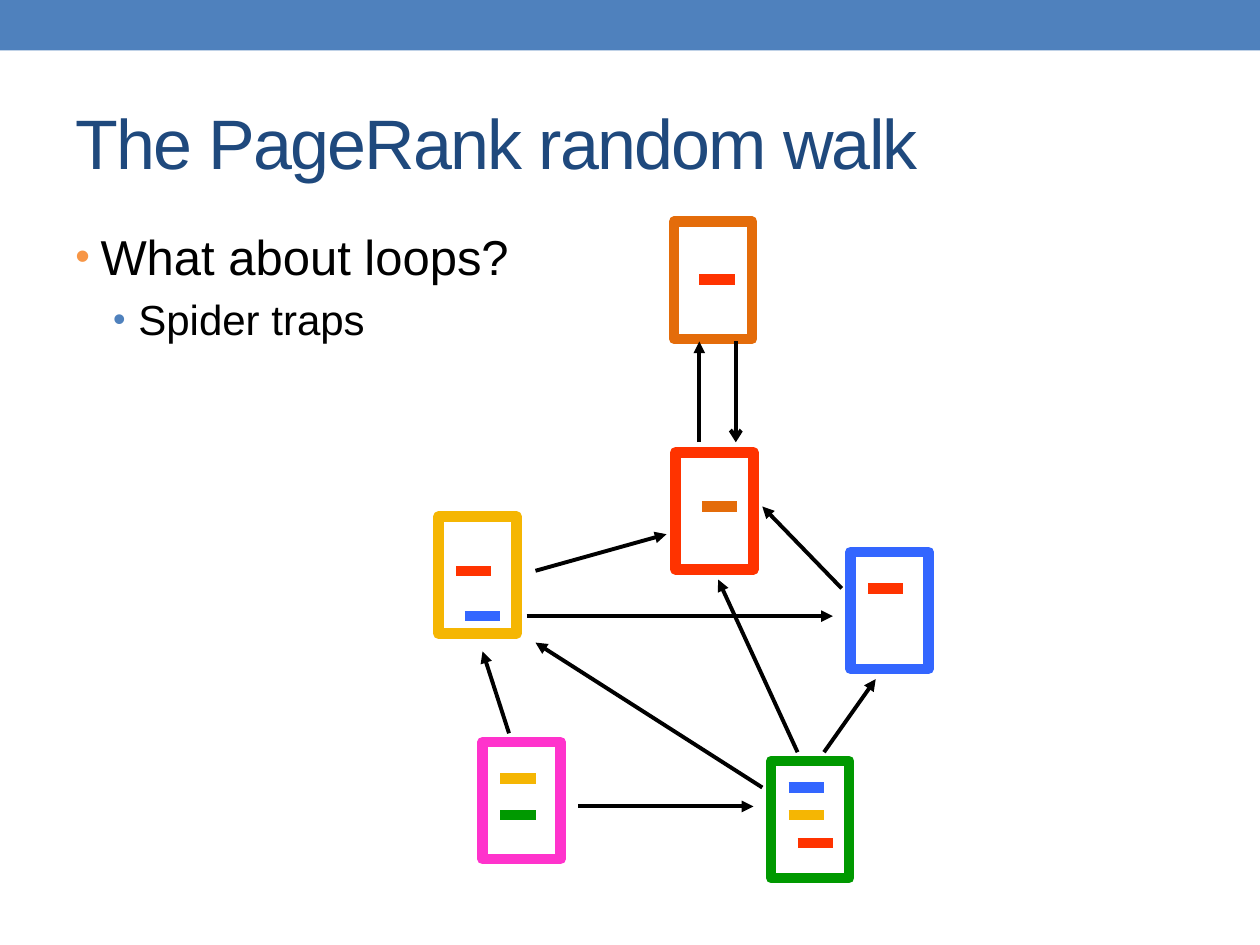
from lxml import etree
from pptx import Presentation, util as u
from pptx.dml.color import RGBColor
from pptx.enum import shapes, text
from pptx.oxml import ns

COLORS = {
    "banner": "4F81BD", "title": "1F497D", "bullet": "F79646",
    "black": "000000", "white": "FFFFFF",
    "yellow": "F5B603", "pink": "FF33CC", "green": "009900",
    "blue": "3366FF", "red": "FF3300", "orange": "E46C0A",
}
PAGE_SIZE = (0.62, 0.93)
LINK_LENGTH = 0.28

# Page colour: (left, top), links as (target page colour, left, y)
PAGES = {
    "yellow": ((3.48, 4.1), [("blue", 3.69, 4.89), ("red", 3.62, 4.53)]),
    "pink": ((3.83, 5.89), [("green", 3.97, 6.47), ("yellow", 3.97, 6.18)]),
    "green": ((6.12, 6.04), [("yellow", 6.26, 6.47), ("blue", 6.26, 6.25),
                             ("red", 6.33, 6.69)]),
    "blue": ((6.75, 4.38), [("red", 6.89, 4.67)]),
    "red": ((5.36, 3.59), [("orange", 5.57, 4.02)]),
    "orange": ((5.35, 1.76), [("red", 5.55, 2.22)]),
}
ARROWS = [
    ((4.59, 6.4), (5.98, 6.4)),
    ((4.04, 5.82), (3.83, 5.17)),
    ((4.25, 4.53), (5.29, 4.24)),
    ((4.18, 4.89), (6.61, 4.89)),
    ((6.68, 4.67), (6.05, 4.02)),
    ((6.33, 5.97), (5.7, 4.6)),
    ((6.54, 5.97), (6.95, 5.39)),
    ((6.05, 6.25), (4.25, 5.1)),
    ((5.55, 3.51), (5.55, 2.71)),
]
TRAP_ARROW = ((5.84, 3.51), (5.84, 2.71))


def rgb(name):
    return RGBColor.from_string(COLORS[name])


def add_xml(parent, tag, **attributes):
    return etree.SubElement(parent, ns.qn(tag), attributes)


def add_rectangle(slide, position, size, fill, outline=None):
    shape = slide.shapes.add_shape(
        shapes.MSO_SHAPE.RECTANGLE, *map(u.Inches, position + size))
    shape.shadow.inherit = False
    shape.fill.solid()
    shape.fill.fore_color.rgb = rgb(fill)
    if outline:
        shape.line.color.rgb = rgb(outline)
        shape.line.width = u.Pt(6)
    else:
        shape.line.fill.background()


def add_line(slide, start, end, color="black", width=2.25, head=None, tail=None):
    """Draw a line; head and tail are arrowhead types at start and end."""
    connector = slide.shapes.add_connector(
        shapes.MSO_CONNECTOR.STRAIGHT, *map(u.Inches, start + end))
    connector.line.color.rgb = rgb(color)
    connector.line.width = u.Pt(width)
    line = connector.line._get_or_add_ln()
    if head:
        add_xml(line, "a:headEnd", type=head)
    if tail:
        add_xml(line, "a:tailEnd", type=tail)
    add_xml(connector._element.spPr, "a:effectLst")


def add_text_frame(slide, position, size, anchor):
    frame = slide.shapes.add_textbox(*map(u.Inches, position + size)).text_frame
    frame.word_wrap = True
    frame.vertical_anchor = anchor
    return frame


def write(paragraph, wording, size, color="black", spacing=None):
    run = paragraph.add_run()
    run.text = wording
    run.font.name = "Arial"
    run.font.size = u.Pt(size)
    run.font.color.rgb = rgb(color)
    if spacing is not None:
        run.font._element.set("spc", str(round(spacing * 100)))


def add_bullet(paragraph, color, margin, level):
    paragraph.level = level
    properties = paragraph._p.get_or_add_pPr()
    properties.set("marL", str(u.Inches(margin)))
    properties.set("indent", str(u.Inches(-0.2)))
    space = add_xml(properties, "a:spcBef")
    add_xml(space, "a:spcPct", val="20000")
    bullet_color = add_xml(properties, "a:buClr")
    add_xml(bullet_color, "a:srgbClr", val=COLORS[color])
    add_xml(properties, "a:buSzPct", val="85000")
    add_xml(properties, "a:buFont", typeface="Arial")
    add_xml(properties, "a:buChar", char="•")


def add_page(slide, color, position, links):
    add_rectangle(slide, position, PAGE_SIZE, "white", color)
    for target, left, y in links:
        add_line(slide, (left, y), (left + LINK_LENGTH, y), target, width=6)


def add_texts(slide):
    title = add_text_frame(slide, (0.5, 0.58), (9, 1.08), text.MSO_ANCHOR.MIDDLE)
    write(title.paragraphs[0], "The PageRank random walk", 40, "title", spacing=-1)

    body = add_text_frame(slide, (0.5, 1.75), (9, 5.33), text.MSO_ANCHOR.TOP)
    question = body.paragraphs[0]
    add_bullet(question, "bullet", 0.2, level=0)
    write(question, "What about loops?", 28)
    answer = body.add_paragraph()
    add_bullet(answer, "banner", 0.5, level=1)
    write(answer, "Spider traps", 24)


def main():
    presentation = Presentation()
    presentation.slide_width = u.Inches(10)
    presentation.slide_height = u.Inches(7.5)
    slide = presentation.slides.add_slide(presentation.slide_layouts[6])

    add_rectangle(slide, (0, 0), (10, 0.4), "banner")
    add_texts(slide)
    for color, (position, links) in PAGES.items():
        add_page(slide, color, position, links)
    for start, end in ARROWS:
        add_line(slide, start, end, tail="triangle")
    add_line(slide, *TRAP_ARROW, head="arrow")

    presentation.save("out.pptx")


if __name__ == "__main__":
    main()
